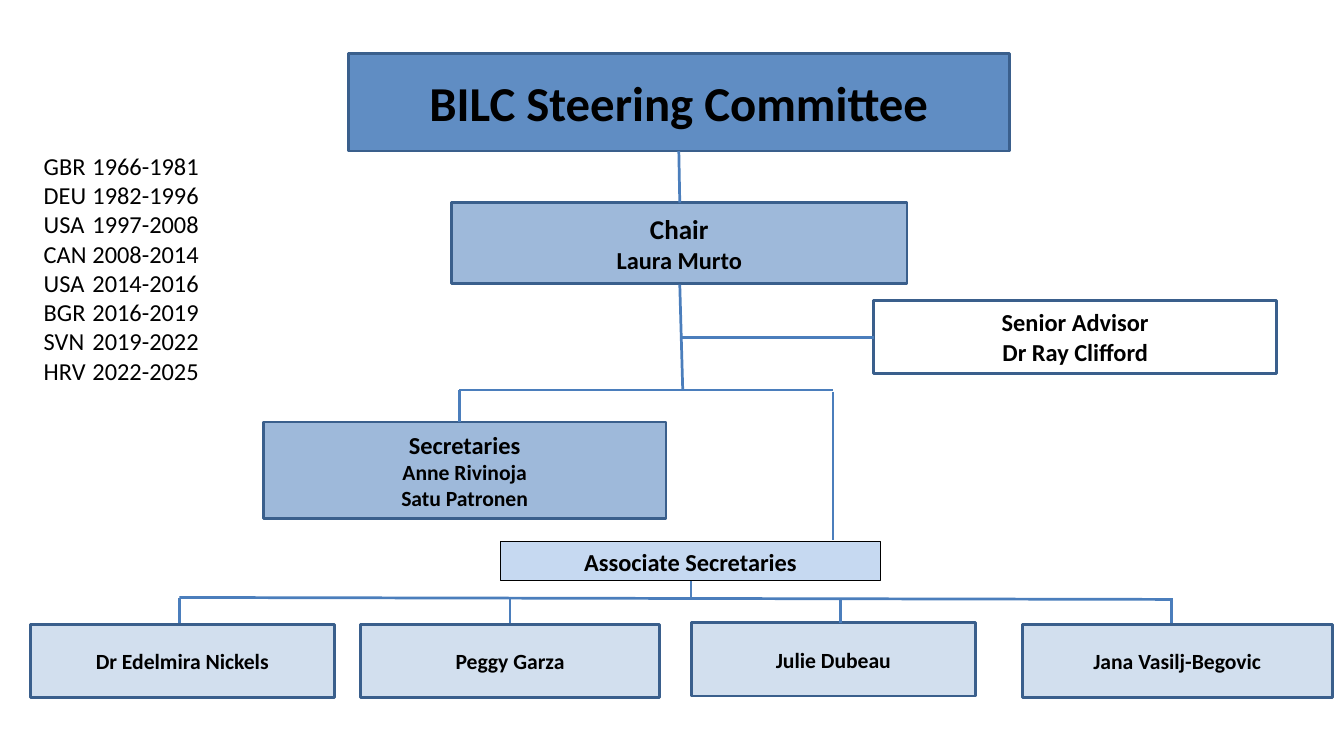
from lxml.etree import SubElement
from pptx import Presentation
from pptx.dml.color import RGBColor
from pptx.enum.shapes import MSO_CONNECTOR, MSO_SHAPE
from pptx.enum.text import MSO_ANCHOR, PP_ALIGN
from pptx.oxml.ns import qn
from pptx.util import Pt

PX = 9144  # 100 px to the inch
COLOURS = {
    "blue": "4F81BD",
    "pale": "C6D9F1",
    "border": "3A5F8C",
    "link": "4B7EBC",
    "black": "000000",
}
TERMS = [
    ("GBR", "1966-1981"),
    ("DEU", "1982-1996"),
    ("USA", "1997-2008"),
    ("CAN", "2008-2014"),
    ("USA", "2014-2016"),
    ("BGR", "2016-2019"),
    ("SVN", "2019-2022"),
    ("HRV", "2022-2025"),
]
ASSOCIATES = [  # name, box width, box top below the row's top
    ("Dr Edelmira Nickels", 312, 28),
    ("Peggy Garza", 306, 28),
    ("Julie Dubeau", 291, 26),
    ("Jana Vasilj-Begovic", 318, 28),
]


def colour(name):
    return RGBColor.from_string(COLOURS[name])


def write(frame, lines, sizes, bold=True, align=PP_ALIGN.CENTER):
    """Fill a frame with one paragraph per line, each with its own size."""
    frame.word_wrap = True
    for index, (line, size) in enumerate(zip(lines, sizes)):
        para = frame.add_paragraph() if index else frame.paragraphs[0]
        para.alignment = align
        span = para.add_run()
        span.text = line
        span.font.name = "Calibri"
        span.font.size = Pt(size)
        span.font.bold = bold
        span.font.color.rgb = colour("black")


def add_box(page, place, lines, sizes, fill="blue", opacity=100,
            border="border", weight=2, kind=MSO_SHAPE.FLOWCHART_PROCESS):
    box = page.shapes.add_shape(kind, *(value * PX for value in place))
    box.shadow.inherit = False
    if fill:
        box.fill.solid()
        box.fill.fore_color.rgb = colour(fill)
        if opacity < 100:
            tint = box.fill._xPr.find(".//" + qn("a:srgbClr"))
            SubElement(tint, qn("a:alpha"), val=str(opacity * 1000))
    else:
        box.fill.background()
    box.line.color.rgb = colour(border)
    box.line.width = Pt(weight)
    box.text_frame.vertical_anchor = MSO_ANCHOR.MIDDLE
    write(box.text_frame, lines, sizes)


def add_link(page, x1, y1, x2, y2, weight=2, tone="link"):
    ends = (value * PX for value in (x1, y1, x2, y2))
    link = page.shapes.add_connector(MSO_CONNECTOR.STRAIGHT, *ends)
    link.line.color.rgb = colour(tone)
    link.line.width = Pt(weight)
    SubElement(link._element.spPr, qn("a:effectLst"))


def add_terms(page, left, top, width, height):
    """List the countries that held the chair, with their years."""
    place = (value * PX for value in (left, top, width, height))
    frame = page.shapes.add_textbox(*place).text_frame
    lines = [f"{country}\t{years}" for country, years in TERMS]
    write(frame, lines, [18] * len(lines), bold=False, align=PP_ALIGN.LEFT)


def add_leadership(page, left, top, width, height):
    """Title, chair and senior advisor, joined down to the box's bottom."""
    add_box(page, (left, top, width, 100), ["BILC Steering Committee"], [36],
            opacity=90)
    add_box(page, (left + 106, top + 153, 467, 83), ["Chair", "Laura Murto"],
            [20, 18], opacity=55)
    add_box(page, (left + 539, top + 253, 413, 75),
            ["Senior Advisor", "Dr Ray Clifford"], [18, 18], fill=None)
    middle = left + width // 2
    add_link(page, middle, top + 100, middle + 1, top + 153)
    add_link(page, middle + 1, top + 237, middle + 4, top + height)
    add_link(page, left + 539, top + 291, middle + 1, top + 291)


def add_secretaries(page, left, top, width, height):
    """Branch to the secretaries on the left and the associates on the right."""
    fork, right = left + 201, left + width
    add_box(page, (left, top + 33, 413, 99),
            ["Secretaries", "Anne Rivinoja", "Satu Patronen"], [18, 16, 16],
            opacity=55)
    add_link(page, fork, top, right, top)
    add_link(page, fork, top, fork, top + 33)
    add_link(page, right, top + 2, right, top + height)


def add_associates(page, left, top, width, height):
    """Heading above a row of associate secretaries at an equal pitch."""
    pitch, row, drop = 339, top + 57, left + 153
    last = drop + pitch * (len(ASSOCIATES) - 1)
    add_box(page, (left + 482, top, 390, 40), ["Associate Secretaries"], [18],
            fill="pale", border="black", weight=0.75, kind=MSO_SHAPE.RECTANGLE)
    add_link(page, left + 677, top + 40, left + 677, row, 1.5, "blue")
    add_link(page, drop, row, last, row + 2)
    for index, (name, box_width, offset) in enumerate(ASSOCIATES):
        shift = index * pitch
        add_box(page, (left + shift, row + offset, box_width, 75), [name], [16],
                opacity=25)
        add_link(page, drop + shift, row + 1, drop + shift, row + 26)


def main():
    deck = Presentation()
    deck.slide_width, deck.slide_height = 1378 * PX, 750 * PX
    page = deck.slides.add_slide(deck.slide_layouts[6])
    add_terms(page, 35, 150, 267, 252)
    add_leadership(page, 357, 55, 678, 345)
    add_secretaries(page, 270, 400, 584, 154)
    add_associates(page, 31, 556, 1334, 160)
    deck.save("out.pptx")


if __name__ == "__main__":
    main()
